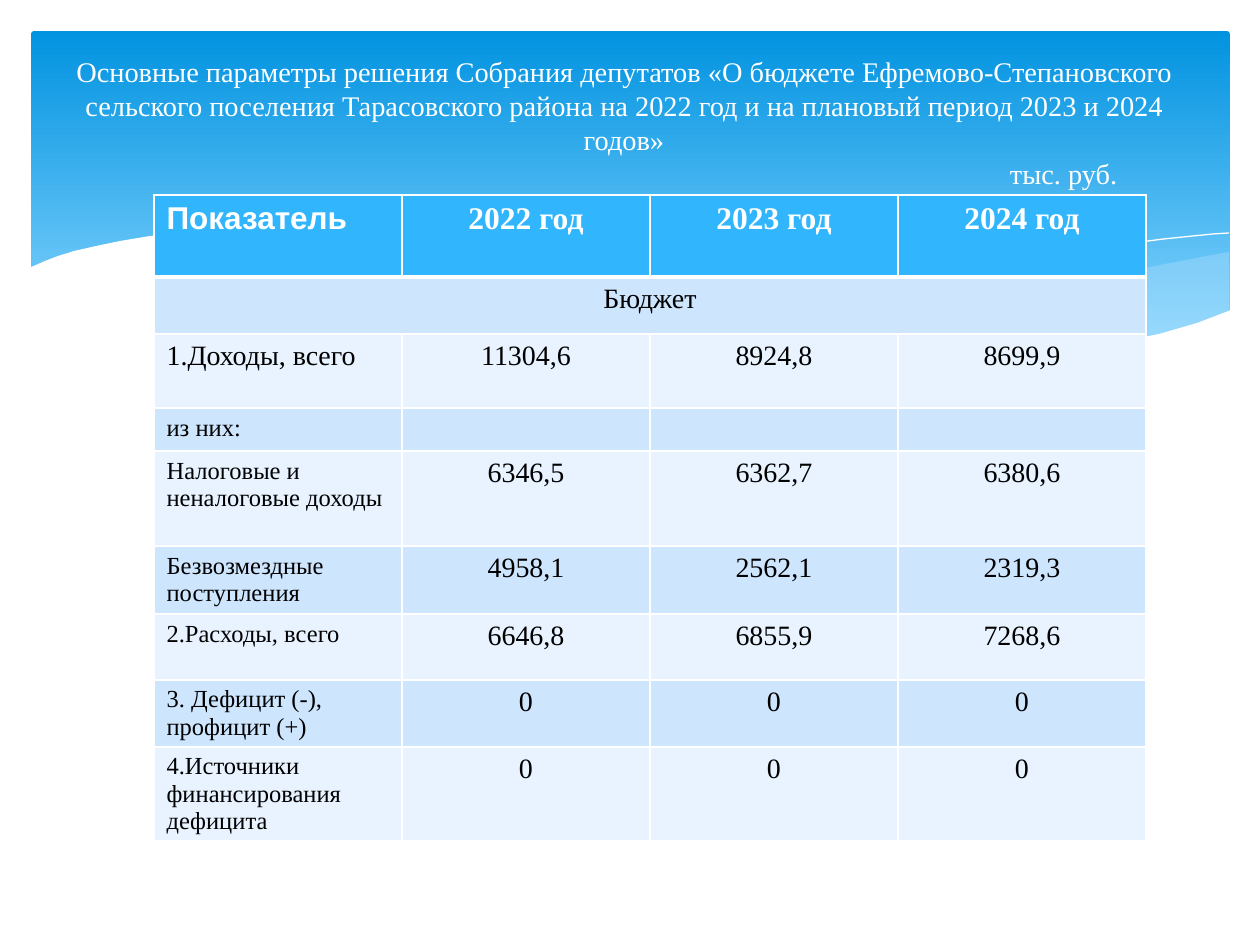
"""Builds a slide with the main budget figures of a rural settlement."""
import pptx
import pptx.dml.color
import pptx.enum.shapes
import pptx.enum.text
import pptx.oxml
import pptx.oxml.ns
import pptx.util

PX = 914400 / 126
SERIF = "Times New Roman"
WHITE, BLACK, SKY = "FFFFFF", "000000", "C6E7FC"
HEADER, DARK_BAND, LIGHT_BAND = "31B6FD", "CEE5FE", "E8F3FF"
ALIGN = pptx.enum.text.PP_ALIGN

TITLE = ("Основные параметры решения Собрания депутатов «О бюджете "
         "Ефремово-Степановского сельского поселения Тарасовского района "
         "на 2022 год и на плановый период 2023 и 2024 годов»")
UNIT = "тыс. руб."
BUDGET = [
    ("Показатель", "2022 год", "2023 год", "2024 год"),
    ("Бюджет", "", "", ""),
    ("1.Доходы, всего", "11304,6", "8924,8", "8699,9"),
    ("из них:", "", "", ""),
    ("Налоговые и неналоговые доходы", "6346,5", "6362,7", "6380,6"),
    ("Безвозмездные поступления", "4958,1", "2562,1", "2319,3"),
    ("2.Расходы, всего", "6646,8", "6855,9", "7268,6"),
    ("3. Дефицит (-), профицит (+)", "0", "0", "0"),
    ("4.Источники финансирования дефицита", "0", "0", "0"),
]
ROW_HEIGHTS = [82, 57, 74, 43, 95, 68, 66, 67, 94]

RIGHT_WING = [
    (1229, 252), (1212, 255), (1160, 265), (1085, 281), (1014, 299), (949, 312),
    (890, 324), (833, 334), (888, 341), (938, 345), (984, 349), (1025, 350),
    (1064, 349), (1102, 346), (1140, 339), (1178, 330), (1213, 318), (1229, 311)]
MIDDLE_BAND = [
    (1125, 344), (1055, 334), (976, 320), (890, 302), (793, 280), (736, 265),
    (682, 255), (632, 247), (586, 241), (529, 236), (479, 233), (433, 234),
    (394, 237), (360, 241), (407, 247), (456, 256), (509, 266), (566, 280),
    (668, 302), (757, 318), (838, 333), (910, 343), (972, 348), (1032, 350),
    (1080, 349)]
FALLING_LINE = [
    (389, 246), (433, 239), (488, 236), (545, 236), (616, 239), (701, 248),
    (801, 262), (916, 284), (1047, 316), (1143, 343)]
RISING_LINE = [
    (772, 324), (823, 310), (907, 288), (978, 272), (1053, 257), (1110, 246),
    (1164, 239), (1213, 234), (1229, 233)]
WHITE_WAVE = [
    (1231, 310), (1197, 323), (1159, 334), (1118, 342), (1071, 346), (1019, 349),
    (959, 347), (867, 338), (816, 330), (760, 320), (699, 309), (634, 294),
    (563, 277), (492, 260), (428, 248), (368, 239), (315, 234), (266, 232),
    (223, 232), (184, 233), (150, 236), (120, 241), (96, 246), (74, 251),
    (58, 256), (45, 261), (29, 268), (29, 415), (1231, 415)]


def px(length):
    """Turn pixels into EMU."""
    return pptx.util.Emu(round(length * PX))


def rgb(code):
    """Turn a hex string into a colour."""
    return pptx.dml.color.RGBColor.from_string(code)


class BudgetSlide:
    """Holds the style and the current slide."""

    def __init__(self, deck, font):
        """Add a blank slide to the deck."""
        self.font = font
        self.shapes = deck.slides.add_slide(deck.slide_layouts[6]).shapes

    def run(self, paragraph, text, size, color, font=None, bold=False):
        """Add one styled run."""
        run = paragraph.add_run()
        run.text = text
        run.font.name = font or self.font
        run.font.size = pptx.util.Pt(size)
        run.font.bold = bold
        run.font.color.rgb = rgb(color)

    def banner(self, left, top, width, height, start, end):
        """Add the rounded panel with a downward gradient."""
        kind = pptx.enum.shapes.MSO_SHAPE.ROUNDED_RECTANGLE
        panel = self.shapes.add_shape(kind, *map(px, (left, top, width, height)))
        panel.adjustments[0] = 0.01
        panel.shadow.inherit = False
        panel.line.fill.background()
        panel.fill.gradient()
        panel.fill.gradient_angle = 270
        for stop, color, position in zip(panel.fill.gradient_stops, (start, end), (0, 0.9)):
            stop.color.rgb = rgb(color)
            stop.position = position

    def outline(self, points, closed):
        """Add a freeform through the points."""
        builder = self.shapes.build_freeform(*points[0], scale=PX)
        builder.add_line_segments(points[1:], close=closed)
        curve = builder.convert_to_shape()
        curve.shadow.inherit = False
        return curve

    def wave(self, points, color, opacity=100):
        """Add a filled wave."""
        wave = self.outline(points, True)
        wave.line.fill.background()
        wave.fill.solid()
        wave.fill.fore_color.rgb = rgb(color)
        if opacity < 100:
            tint = wave.fill._xPr.find(".//" + pptx.oxml.ns.qn("a:srgbClr"))
            alpha = pptx.oxml.parse_xml(
                f'<a:alpha {pptx.oxml.ns.nsdecls("a")} val="{opacity * 1000}"/>')
            tint.append(alpha)

    def hairline(self, points, color):
        """Add a thin open curve."""
        curve = self.outline(points, False)
        curve.fill.background()
        curve.line.color.rgb = rgb(color)
        curve.line.width = 0

    def title(self, left, top, width, height, heading, unit, unit_left):
        """Add the heading with the unit of measure below it."""
        frame = self.shapes.add_textbox(*map(px, (left, top, width, height))).text_frame
        frame.word_wrap = True
        frame.margin_left = frame.margin_right = 0
        frame.vertical_anchor = pptx.enum.text.MSO_ANCHOR.MIDDLE
        centred, indented = frame.paragraphs[0], frame.add_paragraph()
        centred.alignment = ALIGN.CENTER
        indented.alignment = ALIGN.LEFT
        indented._p.get_or_add_pPr().set("marL", str(px(unit_left - left)))
        for paragraph, text in ((centred, heading), (indented, unit)):
            paragraph.line_spacing = pptx.util.Pt(19.4)
            self.run(paragraph, text, 16.2, WHITE)

    def borders(self, cell, color, top, bottom):
        """Draw the four borders of a cell."""
        properties = cell._tc.get_or_add_tcPr()
        for place, (side, width) in enumerate(zip("LRTB", (1, 1, top, bottom))):
            properties.insert(place, pptx.oxml.parse_xml(
                f'<a:ln{side} {pptx.oxml.ns.nsdecls("a")} w="{width * 12700}"><a:solidFill>'
                f'<a:srgbClr val="{color}"/></a:solidFill></a:ln{side}>'))

    def table(self, left, top, column_width, heights, rows):
        """Add the banded table of budget figures."""
        columns = len(rows[0])
        table = self.shapes.add_table(
            len(rows), columns, px(left), px(top),
            px(column_width * columns), px(sum(heights))).table
        for column in table.columns:
            column.width = px(column_width)
        for number, (values, height) in enumerate(zip(rows, heights)):
            table.rows[number].height = px(height)
            band = HEADER if number == 0 else DARK_BAND if number % 2 else LIGHT_BAND
            for place, value in enumerate(values):
                cell = table.cell(number, place)
                cell.fill.solid()
                cell.fill.fore_color.rgb = rgb(band)
                self.borders(cell, WHITE, 3 if number == 1 else 1, 3 if number == 0 else 1)
                paragraph = cell.text_frame.paragraphs[0]
                if place or number == 1:
                    paragraph.alignment = ALIGN.CENTER
                if not value:
                    paragraph._p.get_or_add_endParaRPr().set("sz", "1400")
                elif number == 0:
                    self.run(paragraph, value, 18, WHITE, None if place else "Arial", True)
                else:
                    self.run(paragraph, value, 16 if place or number < 3 else 14, BLACK)
        table.cell(1, 0).merge(table.cell(1, columns - 1))


def main():
    """Build and save the deck."""
    deck = pptx.Presentation()
    deck.slide_width, deck.slide_height = px(1260), px(945)
    budget = BudgetSlide(deck, SERIF)
    budget.banner(31, 31, 1199, 340, "0293E0", "83D3FE")
    budget.wave(RIGHT_WING, SKY, 29)
    budget.wave(MIDDLE_BAND, SKY, 40)
    budget.hairline(FALLING_LINE, WHITE)
    budget.hairline(RISING_LINE, WHITE)
    budget.wave(WHITE_WAVE, WHITE)
    budget.table(154, 195, 248, ROW_HEIGHTS, BUDGET)
    budget.title(63, 69, 1122, 106, TITLE, UNIT, 1010)
    deck.save("out.pptx")


if __name__ == "__main__":
    main()
